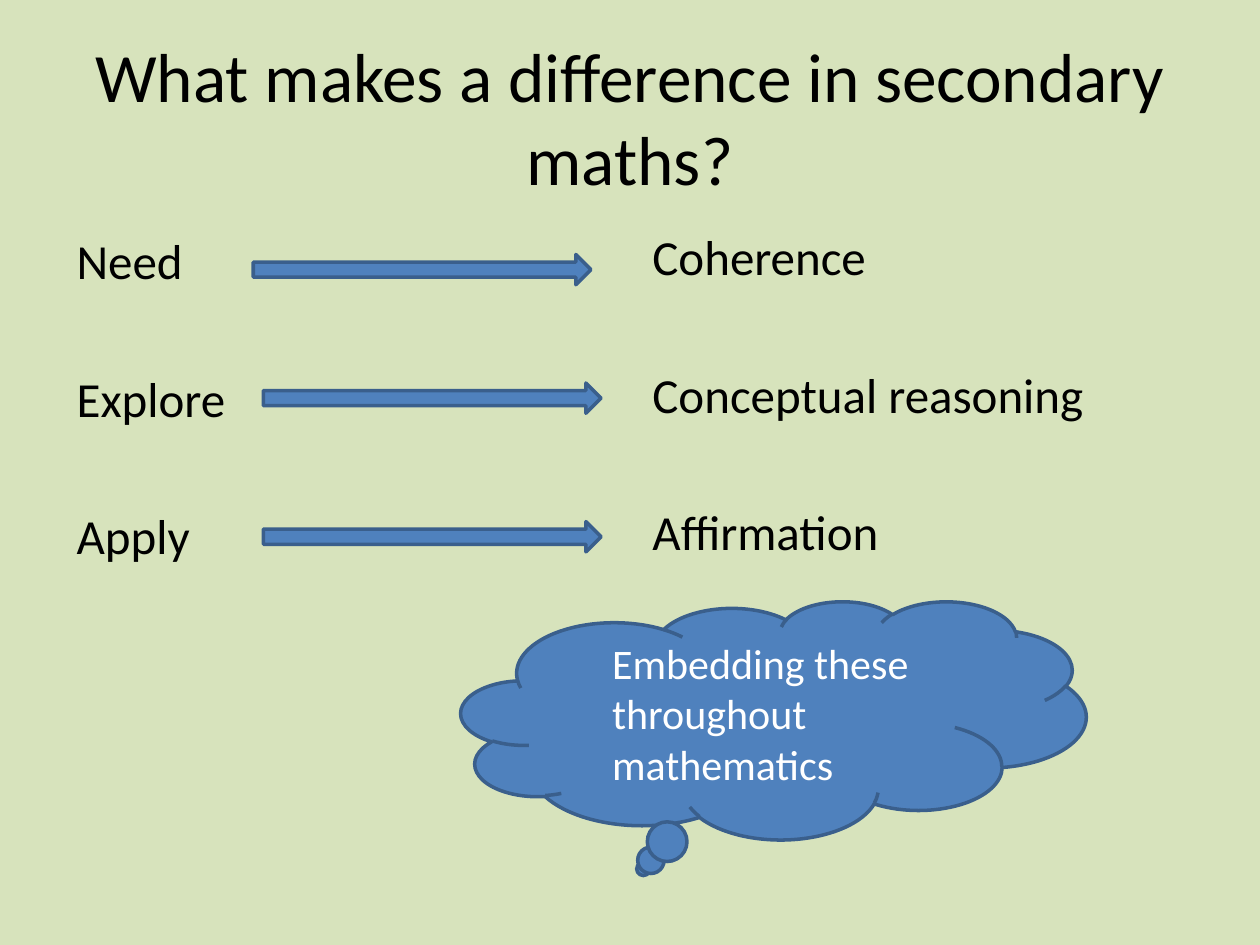
from pptx import Presentation
from pptx.dml.color import RGBColor
from pptx.enum.shapes import MSO_SHAPE
from pptx.enum.text import MSO_ANCHOR, PP_ALIGN
from pptx.util import Inches, Pt

COLUMNS, ROWS = 100, 75


def color(code):
    return RGBColor.from_string(code)


class Page:
    """Style and current slide; positions are cells of a 100 by 75 grid."""

    font = "Calibri"
    ink, light = "000000", "FFFFFF"
    background, accent, outline = "D7E3BC", "4F81BD", "3A5F8C"

    def __init__(self, deck):
        self.column = deck.slide_width / COLUMNS
        self.row = deck.slide_height / ROWS
        self.slide = deck.slides.add_slide(deck.slide_layouts[6])
        fill = self.slide.background.fill
        fill.solid()
        fill.fore_color.rgb = color(self.background)

    def cells(self, left, top, width, height):
        return (round(left * self.column), round(top * self.row),
                round(width * self.column), round(height * self.row))

    def text(self, place, lines, size, ink=ink, align=PP_ALIGN.LEFT,
             anchor=MSO_ANCHOR.TOP, gap=0):
        frame = self.slide.shapes.add_textbox(*self.cells(*place)).text_frame
        frame.word_wrap = True
        frame.vertical_anchor = anchor
        frame.text = "\n".join(lines)
        for index, para in enumerate(frame.paragraphs):
            para.alignment = align
            para.space_before = Pt(gap if index else 0)
            para.font.name = self.font
            para.font.size = Pt(size)
            para.font.color.rgb = color(ink)

    def shape(self, kind, place):
        shape = self.slide.shapes.add_shape(kind, *self.cells(*place))
        shape.shadow.inherit = False
        shape.fill.solid()
        shape.fill.fore_color.rgb = color(self.accent)
        shape.line.color.rgb = color(self.outline)
        shape.line.width = Pt(2)


def main():
    deck = Presentation()
    deck.slide_width, deck.slide_height = Inches(10), Inches(7.5)
    page = Page(deck)

    # Title
    page.text((5, 3, 90, 12.5), ["What makes a difference in secondary maths?"],
              39.6, align=PP_ALIGN.CENTER, anchor=MSO_ANCHOR.MIDDLE)

    # Two columns of paired ideas
    page.text((5.1, 17.8, 44.2, 49.5), ["Need", "Explore", "Apply"], 28, gap=45)
    page.text((50.8, 17.5, 44.2, 49.5),
              ["Coherence", "Conceptual reasoning", "Affirmation"], 28, gap=45)

    # Arrows from each need to its result
    for left, top in ((20.1, 20.2), (20.9, 30.4), (20.9, 41.4)):
        page.shape(MSO_SHAPE.RIGHT_ARROW, (left, top, 26.8, 2.4))

    # Thought cloud with its message
    page.shape(MSO_SHAPE.CLOUD_CALLOUT, (36.6, 47.7, 49.6, 18.9))
    page.text((47.6, 50.1, 32.3, 16.2),
              ["Embedding these throughout mathematics"], 24, ink=page.light)

    deck.save("out.pptx")


if __name__ == "__main__":
    main()
